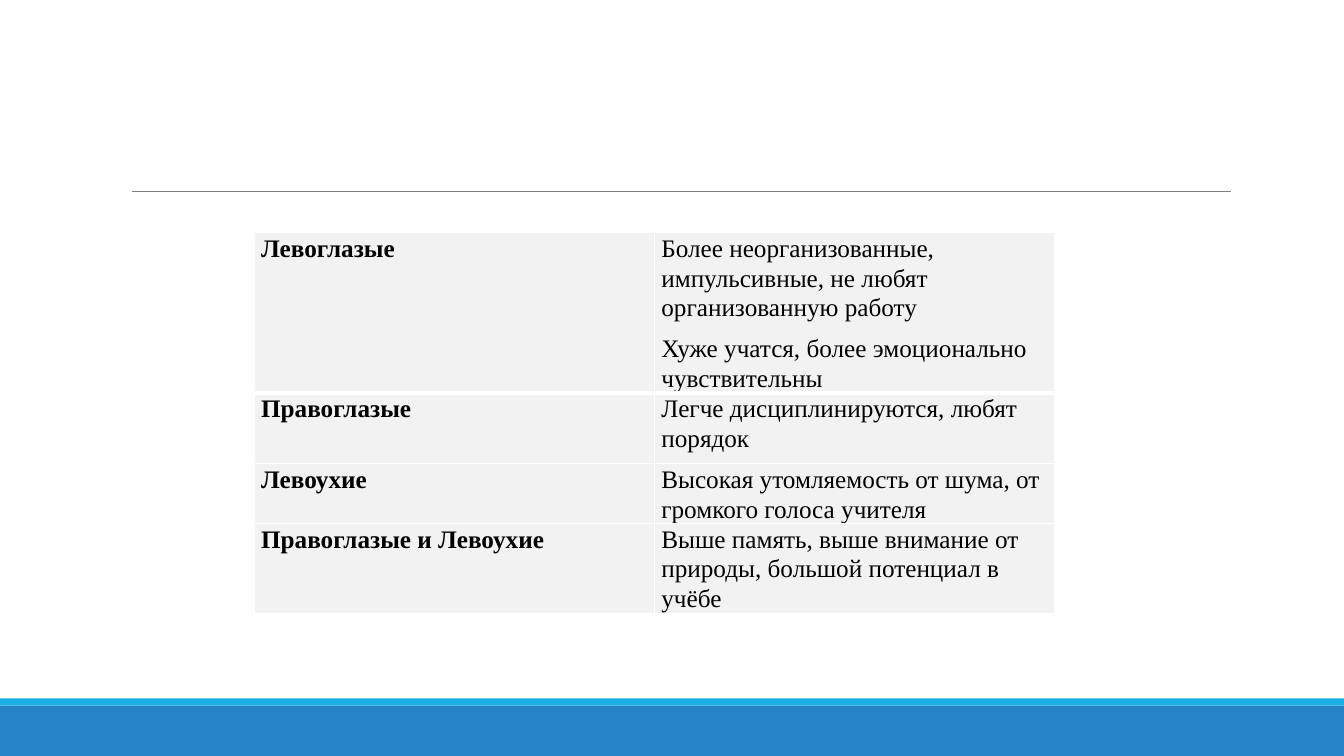
"""Build a slide with a table of eye and ear dominance traits."""
from dataclasses import dataclass

from lxml import etree
from pptx import Presentation
from pptx import util as u
from pptx.dml import color
from pptx.enum import shapes
from pptx.oxml import ns

FONT = "Times New Roman"
WHITE, BLACK, CELL_GRAY, RULE_GRAY = "FFFFFF", "000000", "F2F2F2", "808080"
SLIDE_WIDTH, SLIDE_HEIGHT = 13.33, 7.5
TABLE_LEFT, TABLE_TOP, COLUMN_WIDTH = 2.52, 2.31, 3.97


@dataclass(frozen=True)
class Band:
    top: float
    height: float
    fill: str


@dataclass(frozen=True)
class Trait:
    label: str
    descriptions: tuple[str, ...]
    height: float


BANDS = (Band(7, 0.5, "2683C6"), Band(6.93, 0.07, "1CADE4"))
TRAITS = (
    Trait("Левоглазые", (
        "Более неорганизованные, импульсивные, не любят организованную работу",
        "Хуже учатся, более эмоционально чувствительны"), 1.58),
    Trait("Правоглазые", ("Легче дисциплинируются, любят порядок",), 0.7),
    Trait("Левоухие", ("Высокая утомляемость от шума, от громкого голоса учителя",), 0.52),
    Trait("Правоглазые и Левоухие", (
        "Выше память, выше внимание от природы, большой потенциал в учёбе",), 0.52),
)


def rgb(value: str) -> color.RGBColor:
    return color.RGBColor.from_string(value)


def add_band(slide, band: Band) -> None:
    shape = slide.shapes.add_shape(
        shapes.MSO_SHAPE.RECTANGLE, 0, u.Inches(band.top),
        u.Inches(SLIDE_WIDTH), u.Inches(band.height))
    shape.shadow.inherit = False
    shape.fill.solid()
    shape.fill.fore_color.rgb = rgb(band.fill)
    shape.line.fill.background()


def add_rule(slide, left: float, right: float, top: float) -> None:
    rule = slide.shapes.add_connector(
        shapes.MSO_CONNECTOR.STRAIGHT, u.Inches(left), u.Inches(top),
        u.Inches(right), u.Inches(top))
    rule.line.color.rgb = rgb(RULE_GRAY)
    rule.line.width = u.Pt(0.5)
    etree.SubElement(rule._element.spPr, ns.qn("a:effectLst"))


def write_text(paragraph, text: str, *, bold: bool = False, size: float = 18,
               fill: str = BLACK) -> None:
    paragraph.line_spacing = 1.07
    paragraph.space_after = u.Pt(8)
    run = paragraph.add_run()
    run.text = text
    run.font.name = FONT
    run.font.size = u.Pt(size)
    run.font.bold = bold
    run.font.color.rgb = rgb(fill)


def add_border(cell, side: str, width: float) -> None:
    properties = cell._tc.get_or_add_tcPr()
    line = etree.SubElement(properties, ns.qn(f"a:ln{side}"), w=str(u.Pt(width)))
    solid = etree.SubElement(line, ns.qn("a:solidFill"))
    etree.SubElement(solid, ns.qn("a:srgbClr"), val=WHITE)


def fill_cell(cell, texts: tuple[str, ...], row: int, bold: bool) -> None:
    cell.margin_left = cell.margin_right = u.Inches(0.07)
    cell.margin_top = cell.margin_bottom = 0
    widths = {"L": 1, "R": 1, "T": 3 if row == 1 else 1, "B": 3 if row == 0 else 1}
    for side, width in widths.items():
        add_border(cell, side, width)
    cell.fill.solid()
    cell.fill.fore_color.rgb = rgb(CELL_GRAY)
    frame = cell.text_frame
    for index, text in enumerate(texts):
        paragraph = frame.add_paragraph() if index else frame.paragraphs[0]
        write_text(paragraph, text, bold=bold)


def add_traits_table(slide) -> None:
    height = sum(trait.height for trait in TRAITS)
    table = slide.shapes.add_table(
        len(TRAITS), 2, u.Inches(TABLE_LEFT), u.Inches(TABLE_TOP),
        u.Inches(2 * COLUMN_WIDTH), u.Inches(height)).table
    table.first_row = table.horz_banding = False
    for row, trait in enumerate(TRAITS):
        table.rows[row].height = u.Inches(trait.height)
        fill_cell(table.cell(row, 0), (trait.label,), row, bold=True)
        fill_cell(table.cell(row, 1), trait.descriptions, row, bold=False)


def main() -> None:
    presentation = Presentation()
    presentation.slide_width = u.Inches(SLIDE_WIDTH)
    presentation.slide_height = u.Inches(SLIDE_HEIGHT)
    slide = presentation.slides.add_slide(presentation.slide_layouts[6])
    for band in BANDS:
        add_band(slide, band)
    add_rule(slide, 1.31, 12.21, 1.9)
    add_traits_table(slide)
    presentation.save("out.pptx")


if __name__ == "__main__":
    main()
